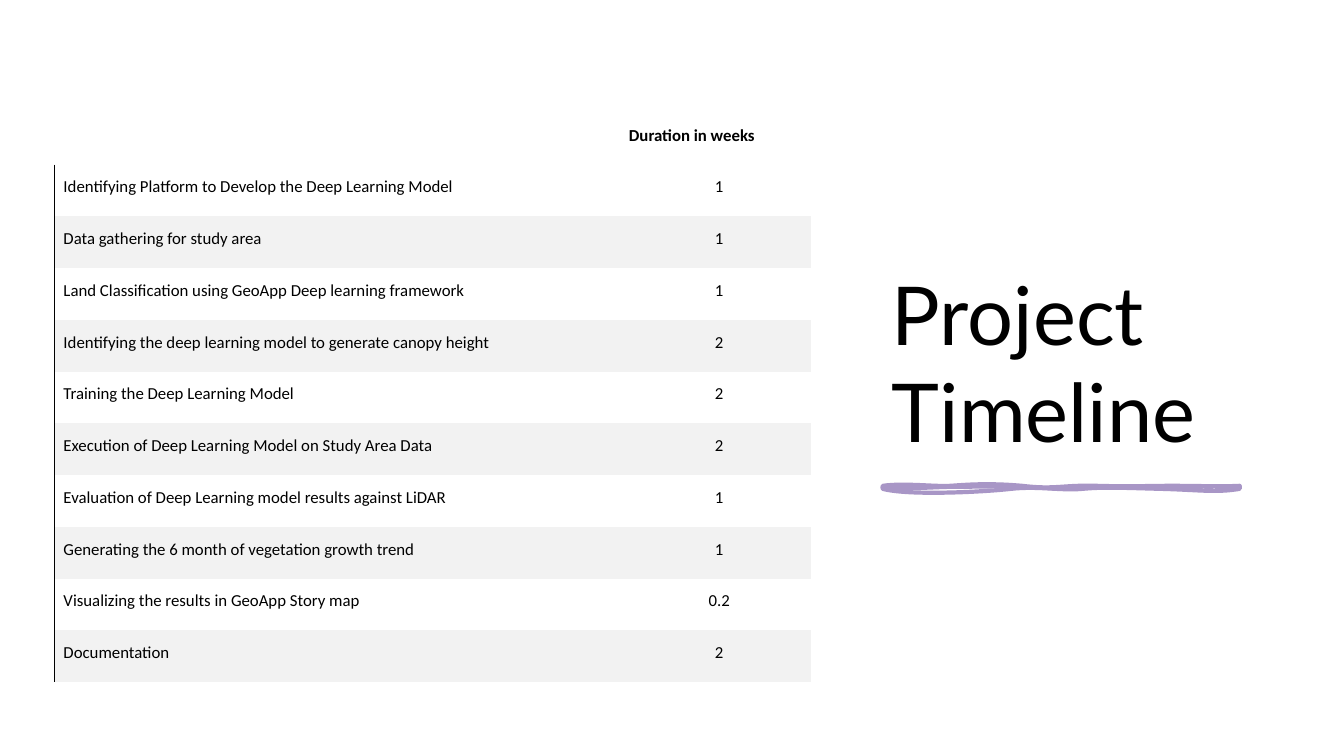
from dataclasses import dataclass

from lxml.etree import SubElement
from pptx import Presentation
from pptx.dml.color import RGBColor
from pptx.enum.shapes import MSO_SHAPE as Shape
from pptx.enum.text import MSO_ANCHOR as Anchor, PP_ALIGN as Align
from pptx.oxml import parse_xml
from pptx.oxml.ns import nsdecls, qn
from pptx.util import Cm, Pt


@dataclass(frozen=True)
class Theme:
    paper: RGBColor = RGBColor(0xFF, 0xFF, 0xFF)
    ink: RGBColor = RGBColor(0x00, 0x00, 0x00)
    band: RGBColor = RGBColor(0xF2, 0xF2, 0xF2)
    accent: RGBColor = RGBColor(0xA8, 0x96, 0xC6)
    title_font: str = "Lato"
    body_font: str = "Calibri"
    title_size: Pt = Pt(58)
    body_size: Pt = Pt(12)
    brush_width: Pt = Pt(3)
    rule_width: Pt = Pt(0.75)


THEME = Theme()
NO_STYLE_NO_GRID = "{2D5ABB26-0587-4C30-8999-92F81FD0307C}"

HEADER = "Duration in weeks"
TASKS = [
    ("Identifying Platform to Develop the Deep Learning Model", "1"),
    ("Data gathering for study area", "1"),
    ("Land Classification using GeoApp Deep learning framework", "1"),
    ("Identifying the deep learning model to generate canopy height", "2"),
    ("Training the Deep Learning Model", "2"),
    ("Execution of Deep Learning Model on Study Area Data", "2"),
    ("Evaluation of Deep Learning model results against LiDAR", "1"),
    ("Generating the 6 month of vegetation growth trend", "1"),
    ("Visualizing the results in GeoApp Story map", "0.2"),
    ("Documentation", "2"),
]

# Cubic curves in inches: two control points and an end point each.
BRUSH_START, BRUSH_END = (8.76, 4.82), (12.30, 4.85)
BRUSH_OUTLINE = [
    ((8.97, 4.79), (9.28, 4.83), (9.43, 4.82)),
    ((9.58, 4.81), (9.80, 4.79), (10.14, 4.82)),
    ((10.48, 4.86), (10.53, 4.81), (10.88, 4.82)),
    ((11.24, 4.83), (11.37, 4.82), (11.63, 4.82)),
    ((11.89, 4.82), (12.11, 4.83), (12.30, 4.82)),
    ((12.30, 4.83), (12.30, 4.85), (12.30, 4.85)),
    ((12.06, 4.89), (11.90, 4.86), (11.52, 4.85)),
    ((11.14, 4.84), (10.95, 4.83), (10.74, 4.85)),
    ((10.53, 4.87), (10.30, 4.82), (10.03, 4.85)),
    ((9.77, 4.88), (9.02, 4.92), (8.76, 4.85)),
    ((8.75, 4.84), (8.76, 4.83), (8.76, 4.82)),
]
BRUSH_FILL = [
    ((9.08, 4.81), (9.10, 4.82), (9.43, 4.82)),
    ((9.76, 4.83), (9.85, 4.81), (10.03, 4.82)),
    ((10.21, 4.83), (10.55, 4.86), (10.81, 4.82)),
    ((11.07, 4.78), (11.30, 4.82), (11.49, 4.82)),
    ((11.67, 4.82), (11.91, 4.85), (12.30, 4.82)),
    ((12.30, 4.84), (12.30, 4.84), (12.30, 4.85)),
    ((12.05, 4.82), (11.82, 4.87), (11.59, 4.85)),
    ((11.37, 4.83), (11.18, 4.82), (10.81, 4.85)),
    ((10.45, 4.88), (10.42, 4.86), (10.21, 4.85)),
    ((10.00, 4.84), (9.76, 4.85), (9.50, 4.85)),
    ((9.24, 4.85), (9.05, 4.88), (8.76, 4.85)),
    ((8.76, 4.84), (8.76, 4.84), (8.76, 4.82)),
]


def add_run(p, text, font, size, bold=False):
    r = p.add_run()
    r.text = text
    r.font.name = font
    r.font.size = size
    r.font.bold = bold
    r.font.color.rgb = THEME.ink


def add_backdrop(s, width, height):
    sp = s.shapes.add_shape(Shape.RECTANGLE, Cm(0), Cm(0), width, height)
    sp.shadow.inherit = False
    sp.fill.solid()
    sp.fill.fore_color.rgb = THEME.paper
    sp.line.fill.background()


def add_title(s, text):
    tb = s.shapes.add_textbox(Cm(22.23), Cm(1.78), Cm(9.91), Cm(9.91))
    tf = tb.text_frame
    tf.word_wrap = True
    tf.vertical_anchor = Anchor.BOTTOM
    add_run(tf.paragraphs[0], text, THEME.title_font, THEME.title_size)


def to_emu(point):
    return tuple(Cm(v * 2.54) for v in point)


def add_curves(path_list, size, curves, **options):
    """Append one closed path of cubic curves, measured from BRUSH_START."""
    left, top = to_emu(BRUSH_START)
    outline = SubElement(path_list, qn("a:path"), w=str(size[0]), h=str(size[1]), **options)

    def add_step(tag, points):
        step = SubElement(outline, qn(tag))
        for x, y in map(to_emu, points):
            SubElement(step, qn("a:pt"), x=str(x - left), y=str(y - top))

    add_step("a:moveTo", [BRUSH_START])
    for curve in curves:
        add_step("a:cubicBezTo", curve)
    SubElement(outline, qn("a:close"))


def add_underline(s):
    left, top = to_emu(BRUSH_START)
    right, bottom = to_emu(BRUSH_END)
    builder = s.shapes.build_freeform(left, top)
    builder.add_line_segments([(right, top), (right, bottom), (left, bottom)])
    sp = builder.convert_to_shape()
    sp.shadow.inherit = False
    sp.fill.solid()
    sp.fill.fore_color.rgb = THEME.accent
    sp.line.color.rgb = THEME.accent
    sp.line.width = THEME.brush_width
    SubElement(sp.element.xpath(".//a:ln")[0], qn("a:round"))

    path_list = sp.element.xpath(".//a:pathLst")[0]
    path_list.remove(path_list[0])
    size = (right - left, bottom - top)
    add_curves(path_list, size, BRUSH_OUTLINE, fill="none")
    add_curves(path_list, size, BRUSH_FILL, stroke="0")


def add_left_rule(cell):
    border = parse_xml(
        f'<a:lnL {nsdecls("a")} w="{THEME.rule_width}"><a:solidFill>'
        f'<a:srgbClr val="{THEME.ink}"/></a:solidFill></a:lnL>')
    cell._tc.get_or_add_tcPr().insert(0, border)


def fill_cell(cell, text, align=Align.LEFT, bold=False, banded=False, right=Cm(0.05)):
    cell.vertical_anchor = Anchor.BOTTOM
    cell.margin_left, cell.margin_top = Cm(0.23), Cm(0.08)
    cell.margin_right, cell.margin_bottom = right, Cm(0.48)
    if banded:
        cell.fill.solid()
        cell.fill.fore_color.rgb = THEME.band
    else:
        cell.fill.background()
    p = cell.text_frame.paragraphs[0]
    p.alignment = align
    if text:
        add_run(p, text, THEME.body_font, THEME.body_size, bold)


def add_timeline(s):
    width, height, header_height = Cm(19.08), Cm(15.41), Cm(2.37)
    frame = s.shapes.add_table(len(TASKS) + 1, 2, Cm(1.37), Cm(1.78), width, height)
    frame.element.xpath(".//a:tableStyleId")[0].text = NO_STYLE_NO_GRID
    table = frame.table
    table.horz_banding = False
    table.columns[0].width = Cm(14.25)
    table.columns[1].width = width - Cm(14.25)
    table.rows[0].height = header_height
    fill_cell(table.cell(0, 0), "")
    fill_cell(table.cell(0, 1), HEADER, bold=True, right=Cm(0.43))
    for row, (task, weeks) in enumerate(TASKS, start=1):
        table.rows[row].height = (height - header_height) // len(TASKS)
        banded = row % 2 == 0
        fill_cell(table.cell(row, 0), task, banded=banded)
        fill_cell(table.cell(row, 1), weeks, Align.CENTER, banded=banded)
        add_left_rule(table.cell(row, 0))


def main():
    prs = Presentation()
    prs.slide_width, prs.slide_height = Cm(33.87), Cm(19.05)
    s = prs.slides.add_slide(prs.slide_layouts[6])
    add_backdrop(s, prs.slide_width, prs.slide_height)
    add_title(s, "Project Timeline")
    add_underline(s)
    add_timeline(s)
    prs.save("out.pptx")


if __name__ == "__main__":
    main()
